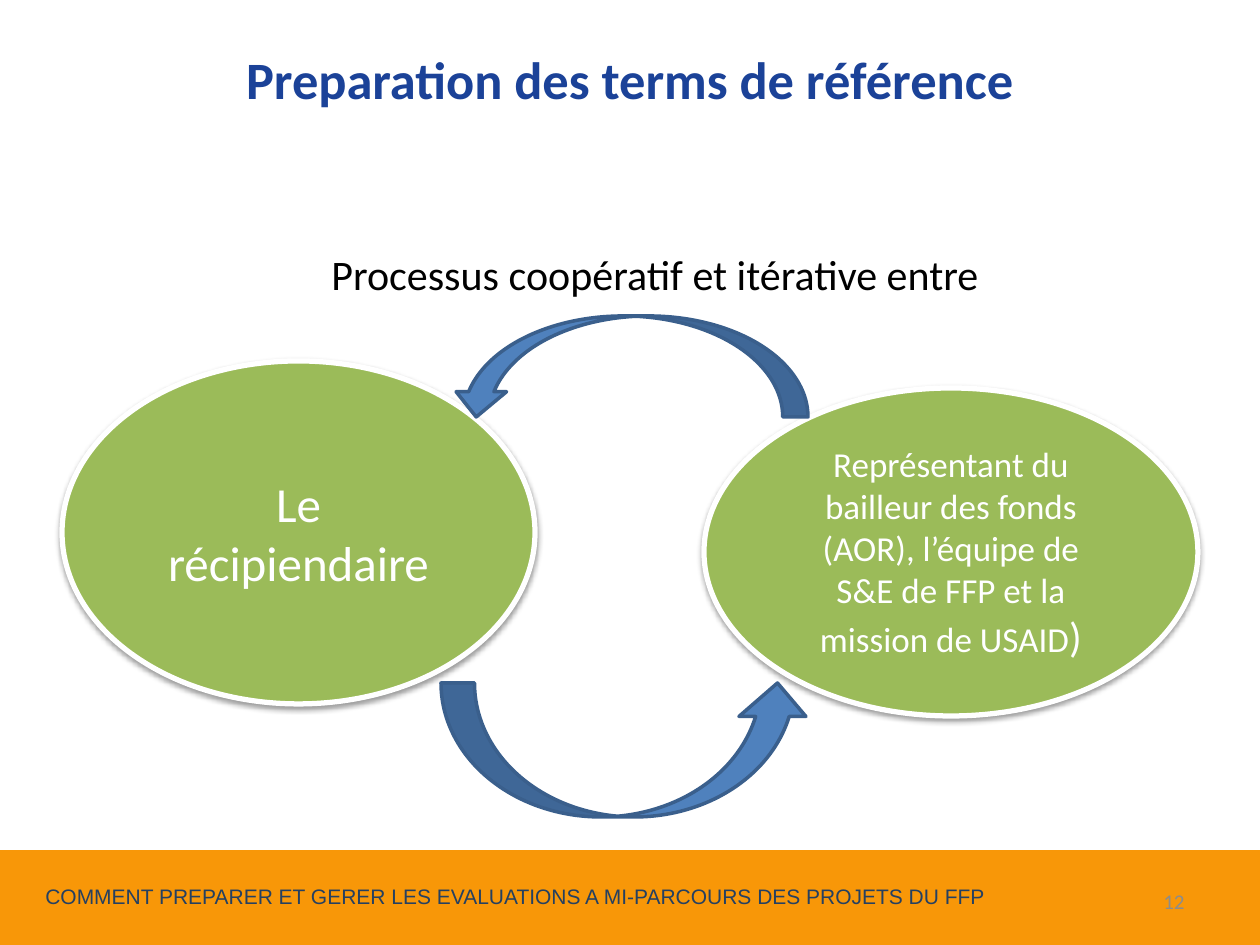
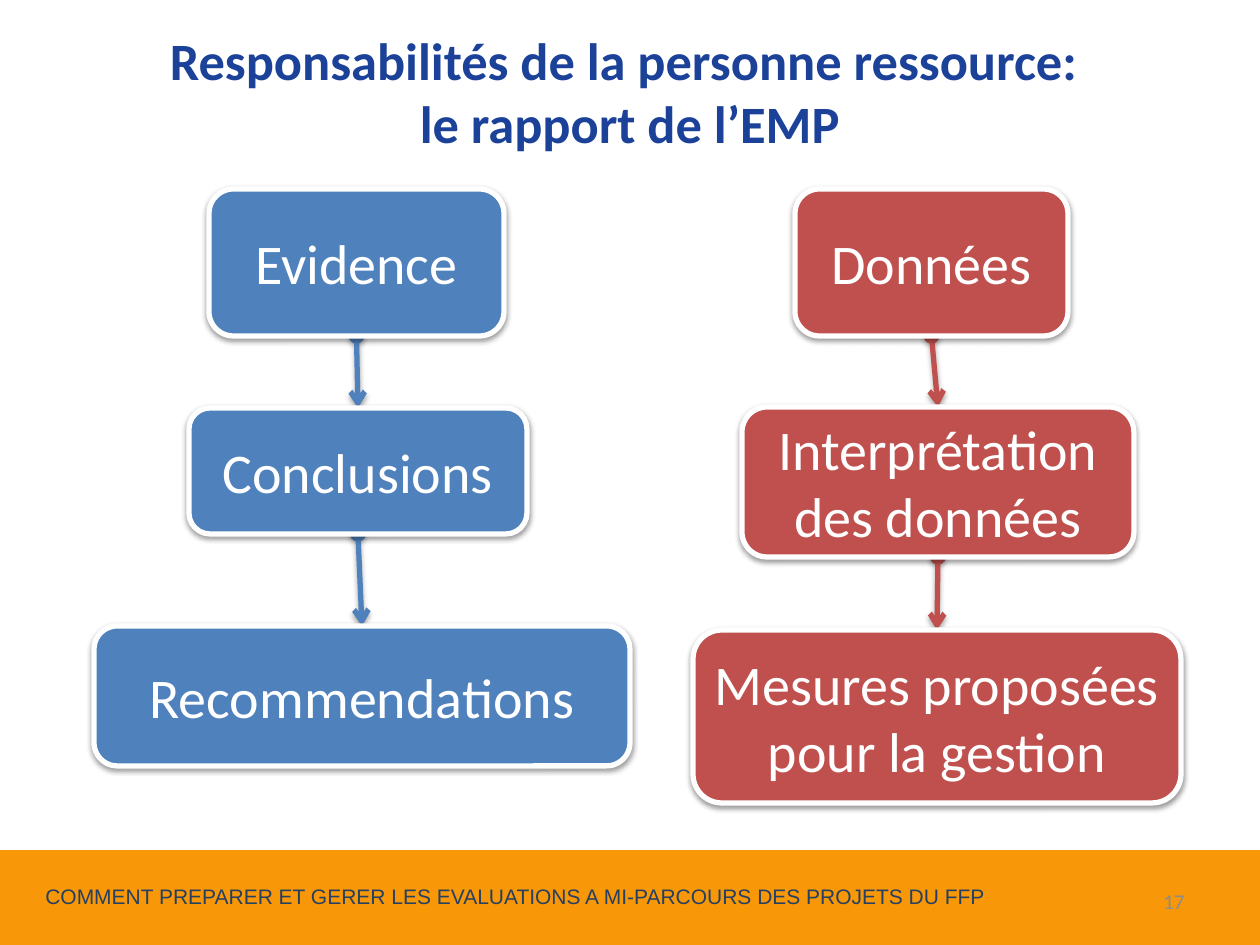
"""Build two slides on mid-term evaluations: the terms of reference and the report."""
from dataclasses import dataclass

from lxml import etree
from pptx import Presentation
from pptx import util as u
from pptx.dml.color import RGBColor
from pptx.enum import shapes, text
from pptx.oxml.ns import qn


@dataclass(frozen=True)
class Theme:
    white: str = "FFFFFF"
    black: str = "000000"
    navy: str = "1B4298"
    slate: str = "254061"
    grey: str = "8C8C8C"
    orange: str = "F89708"
    green: str = "9BBB59"
    blue: str = "4F81BD"
    dark_blue: str = "3A5F8C"
    red: str = "C0504D"
    body_font: str = "Calibri"
    footer_font: str = "Arial"
    small: int = 12
    note: int = 20
    lead: int = 24
    oval: int = 28
    title: int = 30
    step: int = 32


theme = Theme()
PX = u.Inches(1) / 126
SHAPE = shapes.MSO_SHAPE
ALIGN = text.PP_ALIGN
ANCHOR = text.MSO_ANCHOR


def style(shape, fill, edge, width, shadow=None):
    """Set fill, edge and, from (opacity, distance), a soft shadow below."""
    if fill:
        shape.fill.solid()
        shape.fill.fore_color.rgb = RGBColor.from_string(fill)
    if edge:
        shape.line.color.rgb = RGBColor.from_string(edge)
        shape.line.width = u.Pt(width)
    else:
        shape.line.fill.background()
    effects = etree.SubElement(shape.element.spPr, qn("a:effectLst"))
    if shadow:
        opacity, distance = shadow
        outer = etree.SubElement(effects, qn("a:outerShdw"), blurRad=str(u.Pt(3.1)),
                                 dist=str(u.Pt(distance)), dir="5400000", rotWithShape="0")
        colour = etree.SubElement(outer, qn("a:srgbClr"), val=theme.black)
        etree.SubElement(colour, qn("a:alpha"), val=str(opacity * 1000))


def write(box, paragraphs, colour, align=ALIGN.CENTER, anchor=ANCHOR.MIDDLE,
          font=theme.body_font, bold=False):
    """Write paragraphs, each a list of (words, size), run by run."""
    frame = box.text_frame
    frame.word_wrap = True
    frame.vertical_anchor = anchor
    for index, spans in enumerate(paragraphs):
        para = frame.add_paragraph() if index else frame.paragraphs[0]
        para.alignment = align
        for words, size in spans:
            for number, line in enumerate(words.split("\n")):
                if number:
                    para.add_line_break()
                span = para.add_run()
                span.text = line
                span.font.name = font
                span.font.size = u.Pt(size)
                span.font.bold = bold
                span.font.color.rgb = RGBColor.from_string(colour)


deck = Presentation()
deck.slide_width, deck.slide_height = round(1260 * PX), round(945 * PX)
pages = []
headings = [
    ("Preparation des terms de référence", (0, 0, 1260, 156), "12"),
    ("Responsabilités de la personne ressource: \nle rapport de l’EMP", (0, 28, 1260, 126), "17"),
]
for title, title_place, number in headings:
    page = deck.slides.add_slide(deck.slide_layouts[6])
    pages.append(page)
    band = page.shapes.add_shape(SHAPE.RECTANGLE, *[round(v * PX) for v in (0, 850, 1260, 95)])
    style(band, theme.orange, None, 0)
    footer = page.shapes.add_textbox(*[round(v * PX) for v in (33, 877, 1074, 55)])
    write(footer, [[("COMMENT PREPARER ET GERER LES EVALUATIONS A MI-PARCOURS DES PROJETS DU FFP",
                     theme.small)]],
          theme.slate, ALIGN.LEFT, ANCHOR.TOP, theme.footer_font)
    page_number = page.shapes.add_textbox(*[round(v * PX) for v in (903, 876, 294, 50)])
    write(page_number, [[(number, theme.small)]], theme.grey, ALIGN.RIGHT)
    heading = page.shapes.add_textbox(*[round(v * PX) for v in title_place])
    write(heading, [[(title, theme.title)]], theme.navy, bold=True)

terms_page, report_page = pages

lead = terms_page.shapes.add_textbox(*[round(v * PX) for v in (257, 242, 796, 63)])
write(lead, [[("Processus coopératif et itérative entre", theme.lead)]],
      theme.black, anchor=ANCHOR.TOP)

partners = [
    ((62, 361, 473, 343), [[("Le récipiendaire", theme.oval)]]),
    ((704, 388, 494, 328), [
        [("Représentant du bailleur des fonds (AOR), l’équipe de", theme.note)],
        [("S&E de FFP et la mission de USAID", theme.note), (")", theme.lead)],
    ]),
]
for place, paragraphs in partners:
    oval = terms_page.shapes.add_shape(SHAPE.OVAL, *[round(v * PX) for v in place])
    style(oval, theme.green, theme.white, 3, (38, 1.6))
    write(oval, paragraphs, theme.white)
    oval.text_frame.margin_left = oval.text_frame.margin_right = round(25 * PX)

for kind, place, flipped in [
    (SHAPE.CURVED_UP_ARROW, (441, 683, 370, 134), False),
    (SHAPE.CURVED_DOWN_ARROW, (451, 316, 357, 101), True),
]:
    arrow = terms_page.shapes.add_shape(kind, *[round(v * PX) for v in place])
    style(arrow, theme.blue, theme.dark_blue, 2)
    if flipped:
        arrow.element.spPr.find(qn("a:xfrm")).set("flipH", "1")

columns = [
    (theme.blue, [
        ("Evidence", (209, 189, 295, 147)),
        ("Conclusions", (189, 408, 338, 126)),
        ("Recommendations", (94, 626, 536, 140)),
    ]),
    (theme.red, [
        ("Données", (795, 189, 273, 147)),
        ("Interprétation des données", (742, 407, 392, 150)),
        ("Mesures proposées pour la gestion", (693, 630, 488, 173)),
    ]),
]
for colour, steps in columns:
    links = []
    for (_, upper), (_, lower) in zip(steps, steps[1:]):
        ends = (upper[0] + upper[2] / 2, upper[1] + upper[3], lower[0] + lower[2] / 2, lower[1])
        link = report_page.shapes.add_connector(shapes.MSO_CONNECTOR.STRAIGHT,
                                                *[round(v * PX) for v in ends])
        style_fill = None
        style(link, style_fill, colour, 3, (35, 1.8))
        outline = link.element.spPr.find(qn("a:ln"))
        etree.SubElement(outline, qn("a:headEnd"), type="oval")
        etree.SubElement(outline, qn("a:tailEnd"), type="arrow")
        links.append(link)

    boxes = []
    for label, place in steps:
        box = report_page.shapes.add_shape(SHAPE.ROUNDED_RECTANGLE, *[round(v * PX) for v in place])
        style(box, colour, theme.white, 3, (38, 1.6))
        write(box, [[(label, theme.step)]], theme.white)
        boxes.append(box)

    for link, upper_box, lower_box in zip(links, boxes, boxes[1:]):
        link.begin_connect(upper_box, 2)
        link.end_connect(lower_box, 0)

deck.save("out.pptx")
